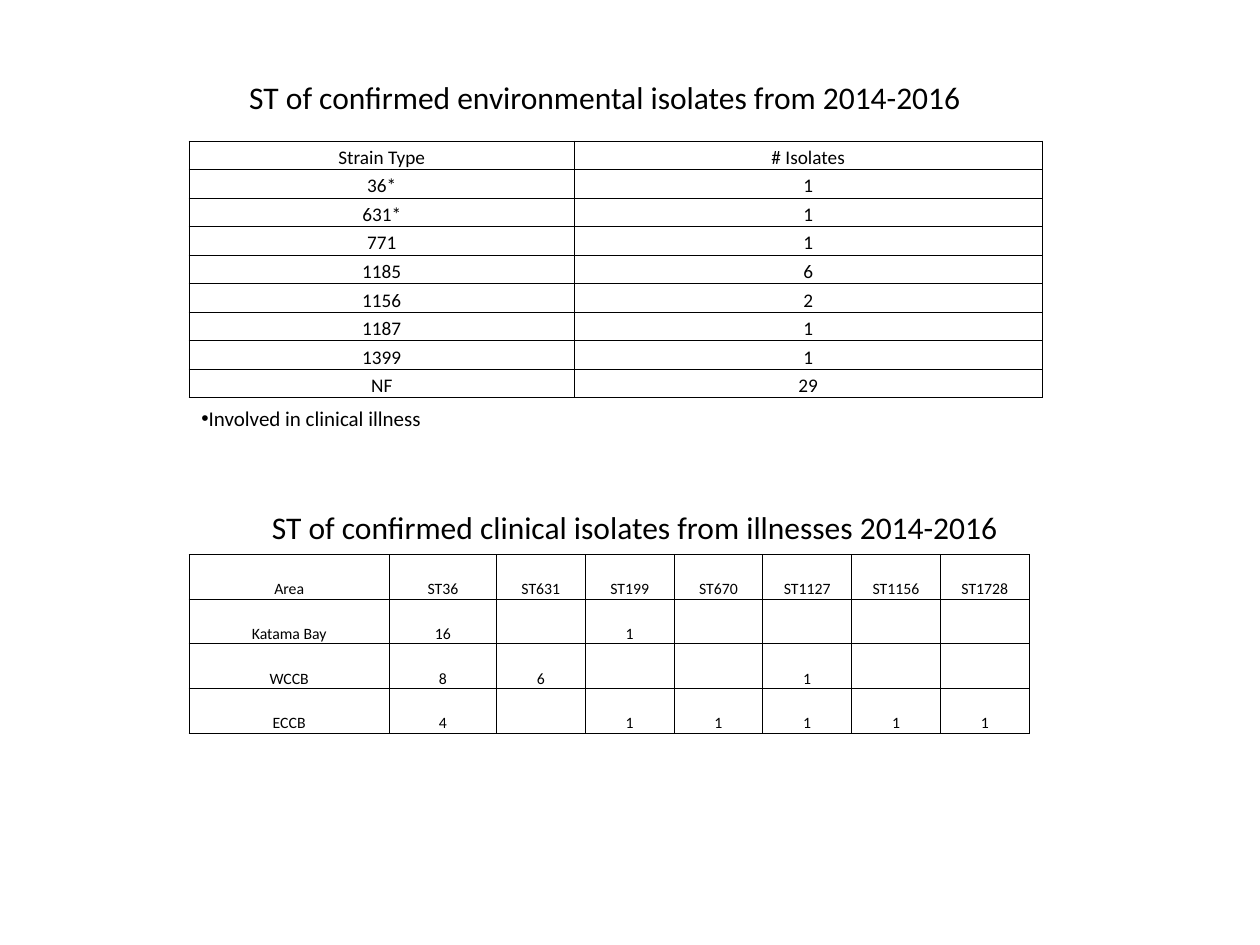
from dataclasses import dataclass

from lxml import etree
from pptx import Presentation
from pptx.dml.color import RGBColor
from pptx.enum.text import MSO_ANCHOR, MSO_AUTO_SIZE, PP_ALIGN
from pptx.oxml.ns import qn
from pptx.util import Inches, Pt

CENTER, LEFT = PP_ALIGN.CENTER, PP_ALIGN.LEFT
BOTTOM = MSO_ANCHOR.BOTTOM
GROW = MSO_AUTO_SIZE.SHAPE_TO_FIT_TEXT
COLORS = {"ink": "000000"}
FONT = "Calibri"
EDGE = 1.5


@dataclass
class Grid:
    top: float
    height: float
    widths: list[float]
    size: int
    rows: list[list[str]]


@dataclass
class Label:
    text: str
    left: float
    top: float
    width: float
    height: float
    size: int
    bullet: str = ""


GRIDS = [
    Grid(1.12, 2.04, [3.06, 3.71], 11, [
        ["Strain Type", "# Isolates"],
        ["36*", "1"],
        ["631*", "1"],
        ["771", "1"],
        ["1185", "6"],
        ["1156", "2"],
        ["1187", "1"],
        ["1399", "1"],
        ["NF", "29"],
    ]),
    Grid(4.4, 1.42, [1.59, 0.85] + [0.705] * 6, 9, [
        ["Area", "ST36", "ST631", "ST199", "ST670", "ST1127", "ST1156", "ST1728"],
        ["Katama Bay", "16", "", "1", "", "", "", ""],
        ["WCCB", "8", "6", "", "", "1", "", ""],
        ["ECCB", "4", "", "1", "1", "1", "1", "1"],
    ]),
]

LABELS = [
    Label("ST of confirmed clinical isolates from illnesses 2014-2016",
          2.06, 3.98, 6.02, 0.4, 18),
    Label("ST of confirmed environmental isolates from 2014-2016",
          1.88, 0.57, 5.9, 0.71, 18),
    Label("Involved in clinical illness", EDGE, 3.17, 2, 0.61, 12, "•"),
]


def write(frame, text: str, *, size: int, align=LEFT, bullet: str = "") -> None:
    para = frame.paragraphs[0]
    para.alignment = align
    if bullet:
        props = para._p.get_or_add_pPr()
        props.set("marL", "0")
        props.set("indent", "0")
        etree.SubElement(props, qn("a:buFont"), typeface="Arial")
        etree.SubElement(props, qn("a:buChar"), char=bullet)
    if text:
        run = para.add_run()
        run.text = text
        run.font.name = FONT
        run.font.size = Pt(size)
        run.font.color.rgb = RGBColor.from_string(COLORS["ink"])


def outline(cell) -> None:
    """Rule all four sides of a cell with a thin line."""
    props = cell._tc.get_or_add_tcPr()
    for side in ("lnL", "lnR", "lnT", "lnB"):
        line = etree.SubElement(props, qn(f"a:{side}"), w=str(Pt(0.5)))
        fill = etree.SubElement(line, qn("a:solidFill"))
        etree.SubElement(fill, qn("a:srgbClr"), val=COLORS["ink"])


def draw_grid(slide, grid: Grid) -> None:
    table = slide.shapes.add_table(
        len(grid.rows), len(grid.widths), Inches(EDGE), Inches(grid.top),
        Inches(sum(grid.widths)), Inches(grid.height)).table
    table.first_row = table.horz_banding = False
    for col, width in zip(table.columns, grid.widths):
        col.width = Inches(width)
    for row, texts in zip(table.rows, grid.rows):
        row.height = Inches(grid.height / len(grid.rows))
        for cell, text in zip(row.cells, texts):
            cell.margin_left = cell.margin_right = 0
            cell.margin_top = cell.margin_bottom = 0
            cell.vertical_anchor = BOTTOM
            outline(cell)
            cell.fill.background()
            write(cell.text_frame, text, size=grid.size, align=CENTER)


def draw_label(slide, label: Label) -> None:
    box = slide.shapes.add_textbox(
        Inches(label.left), Inches(label.top),
        Inches(label.width), Inches(label.height))
    frame = box.text_frame
    frame.word_wrap = False
    frame.auto_size = GROW
    write(frame, label.text, size=label.size, bullet=label.bullet)


def main() -> None:
    deck = Presentation()
    deck.slide_width, deck.slide_height = Inches(10), Inches(7.5)
    slide = deck.slides.add_slide(deck.slide_layouts[6])
    for grid in GRIDS:
        draw_grid(slide, grid)
    for label in LABELS:
        draw_label(slide, label)
    deck.save("out.pptx")


if __name__ == "__main__":
    main()
